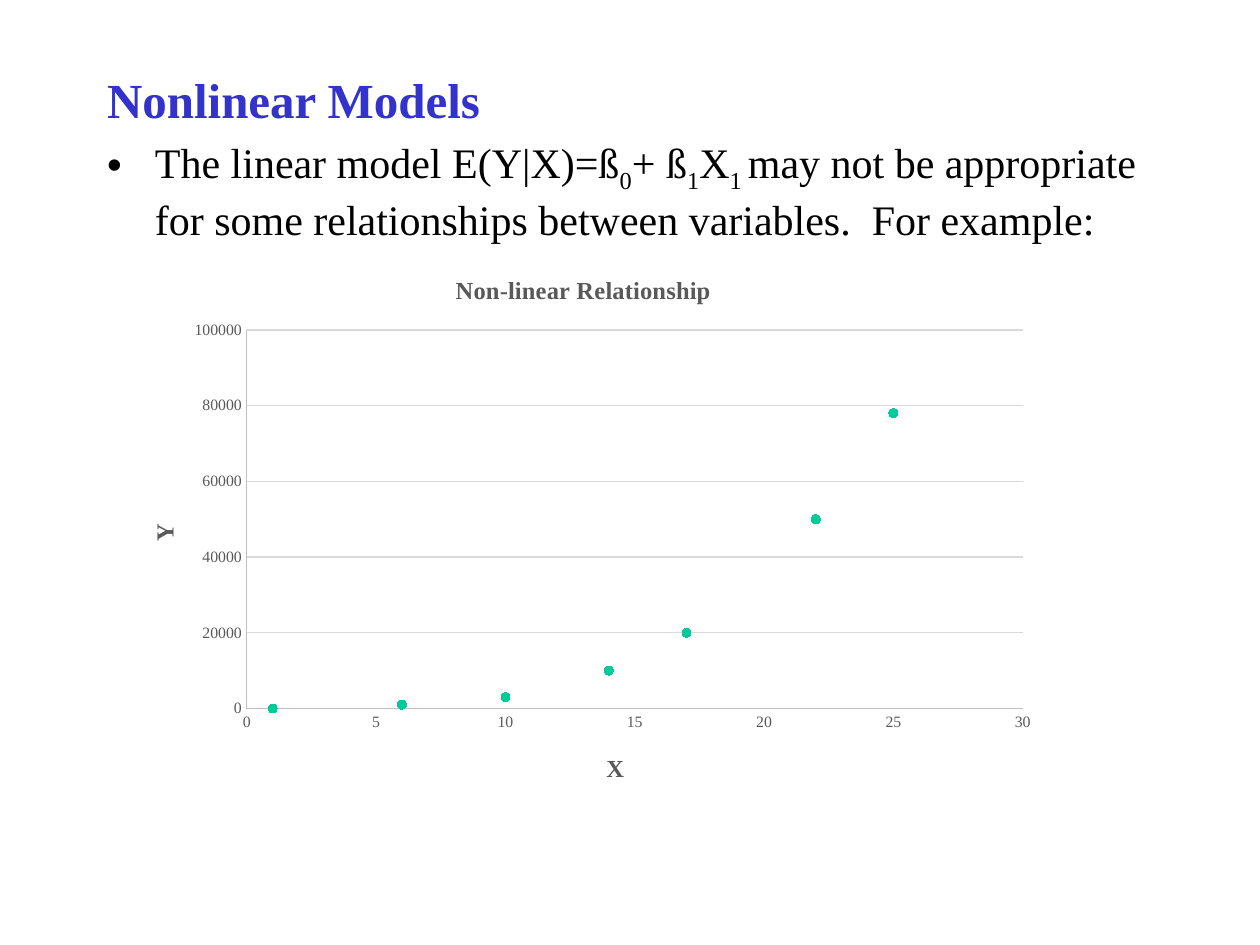
from dataclasses import dataclass

from lxml.etree import SubElement
from pptx import Presentation
from pptx.chart.data import XyChartData
from pptx.dml.color import RGBColor
from pptx.enum.chart import XL_CHART_TYPE, XL_MARKER_STYLE, XL_TICK_MARK
from pptx.enum.text import MSO_ANCHOR, MSO_AUTO_SIZE
from pptx.oxml.ns import qn
from pptx.util import Inches, Pt


@dataclass(frozen=True)
class Theme:
    """Colours, font and type sizes of the slide."""
    font: str = "Times New Roman"
    heading: str = "3333CC"
    body: str = "000000"
    label: str = "595959"
    axis: str = "BFBFBF"
    grid: str = "D9D9D9"
    marker: str = "00CC99"
    heading_size: int = 28
    body_size: int = 24
    chart_title_size: int = 14
    tick_size: int = 9


THEME = Theme()
W, H = Inches(10), Inches(7.5)
HEADING = "Nonlinear Models"
STATEMENT = [
    ("The linear model E(Y|X)=ß", False), ("0", True), ("+ ß", False),
    ("1", True), ("X", False), ("1 ", True),
    ("may not be appropriate  for some relationships between variables.  For example:", False),
]
POINTS = [(1, 0), (6, 1000), (10, 3000), (14, 10000), (17, 20000), (22, 50000), (25, 78000)]


def style_font(font, size, color, bold=False):
    """Apply the theme font with a size, colour and weight."""
    font.name, font.size, font.bold = THEME.font, Pt(size), bold
    font.color.rgb = RGBColor.from_string(color)


def style_line(line, color):
    """Give a chart line its colour and the common width."""
    line.color.rgb = RGBColor.from_string(color)
    line.width = Pt(0.75)


def set_bullet(p, char=None):
    """Set the hanging indent and an optional bullet character."""
    pPr = p._p.get_or_add_pPr()
    pPr.set("marL", str(Inches(0.38)))
    pPr.set("indent", str(-Inches(0.38)))
    if char:
        SubElement(pPr, qn("a:buChar")).set("char", char)
    else:
        SubElement(pPr, qn("a:buNone"))


def add_body(s):
    """Fill the body placeholder with the heading and the statement."""
    title = s.shapes.title._element
    title.getparent().remove(title)
    sp = s.placeholders[1]
    sp.left, sp.top = int(W * 0.075), Inches(0.5)
    sp.width, sp.height = int(W * 0.85), Inches(6.25)
    tf = sp.text_frame
    tf.word_wrap, tf.auto_size = True, MSO_AUTO_SIZE.NONE
    tf.vertical_anchor = MSO_ANCHOR.TOP
    tf.text = HEADING
    p = tf.paragraphs[0]
    set_bullet(p)
    style_font(p.runs[0].font, THEME.heading_size, THEME.heading, True)
    p = tf.add_paragraph()
    set_bullet(p, "•")
    for text, subscript in STATEMENT:
        r = p.add_run()
        r.text = text
        style_font(r.font, THEME.body_size, THEME.body)
        if subscript:
            r.font._element.set("baseline", "-25000")


def place(parent, index, x, y, size=None):
    """Place a chart part by shares of the chart's size."""
    for old in parent.findall(qn("c:layout")):
        parent.remove(old)
    layout = SubElement(parent, qn("c:layout"))
    parent.insert(index, layout)
    manual = SubElement(layout, qn("c:manualLayout"))
    values = {"xMode": "edge", "yMode": "edge", "x": x, "y": y}
    if size:
        values = {"layoutTarget": "inner", **values, "w": size[0], "h": size[1]}
    for tag, value in values.items():
        SubElement(manual, qn(f"c:{tag}")).set("val", str(value))


def set_title(title, text):
    """Write a bold chart or axis title."""
    tf = title.text_frame
    tf.text = text
    style_font(tf.paragraphs[0].runs[0].font, THEME.chart_title_size, THEME.label, True)


def style_axis(axis, text, maximum, step, x, y):
    """Set an axis's scale, ticks, line and title."""
    axis.minimum_scale, axis.maximum_scale, axis.major_unit = 0, maximum, step
    axis.major_tick_mark = axis.minor_tick_mark = XL_TICK_MARK.NONE
    axis.tick_labels.number_format = "General"
    axis.tick_labels.number_format_is_linked = False
    style_font(axis.tick_labels.font, THEME.tick_size, THEME.label)
    style_line(axis.format.line, THEME.axis)
    set_title(axis.axis_title, text)
    place(axis.axis_title._element, 1, x, y)


def add_scatter(s):
    """Add the scatter chart of the non-linear relationship."""
    data = XyChartData()
    points = data.add_series("Series 1")
    for x, y in POINTS:
        points.add_data_point(x, y)
    chart = s.shapes.add_chart(
        XL_CHART_TYPE.XY_SCATTER, Inches(0.92), Inches(2), Inches(7.42), Inches(4.42), data
    ).chart
    style_font(chart.font, 10, THEME.body)
    chart.has_legend = False
    set_title(chart.chart_title, "Non-linear Relationship")
    x_axis, y_axis = chart.category_axis, chart.value_axis
    style_axis(x_axis, "X", 30, 5, 0.52, 0.89)
    style_axis(y_axis, "Y", 100000, 20000, 0.03, 0.48)
    y_axis.axis_title.text_frame._txBody.bodyPr.set("rot", "-5400000")
    x_axis.has_major_gridlines = False
    y_axis.has_major_gridlines = True
    style_line(y_axis.major_gridlines.format.line, THEME.grid)
    place(chart._chartSpace.find(".//" + qn("c:plotArea")), 0, 0.14, 0.14, (0.83, 0.68))
    plot = chart.plots[0]
    plot.vary_by_categories = False
    series = plot.series[0]
    series.format.line.fill.background()
    marker = series.marker
    marker.style, marker.size = XL_MARKER_STYLE.CIRCLE, 5
    marker.format.fill.solid()
    marker.format.fill.fore_color.rgb = RGBColor.from_string(THEME.marker)
    style_line(marker.format.line, THEME.marker)


def main():
    """Build and save the slide."""
    prs = Presentation()
    prs.slide_width, prs.slide_height = W, H
    s = prs.slides.add_slide(prs.slide_layouts[1])
    add_body(s)
    add_scatter(s)
    prs.save("out.pptx")


if __name__ == "__main__":
    main()
